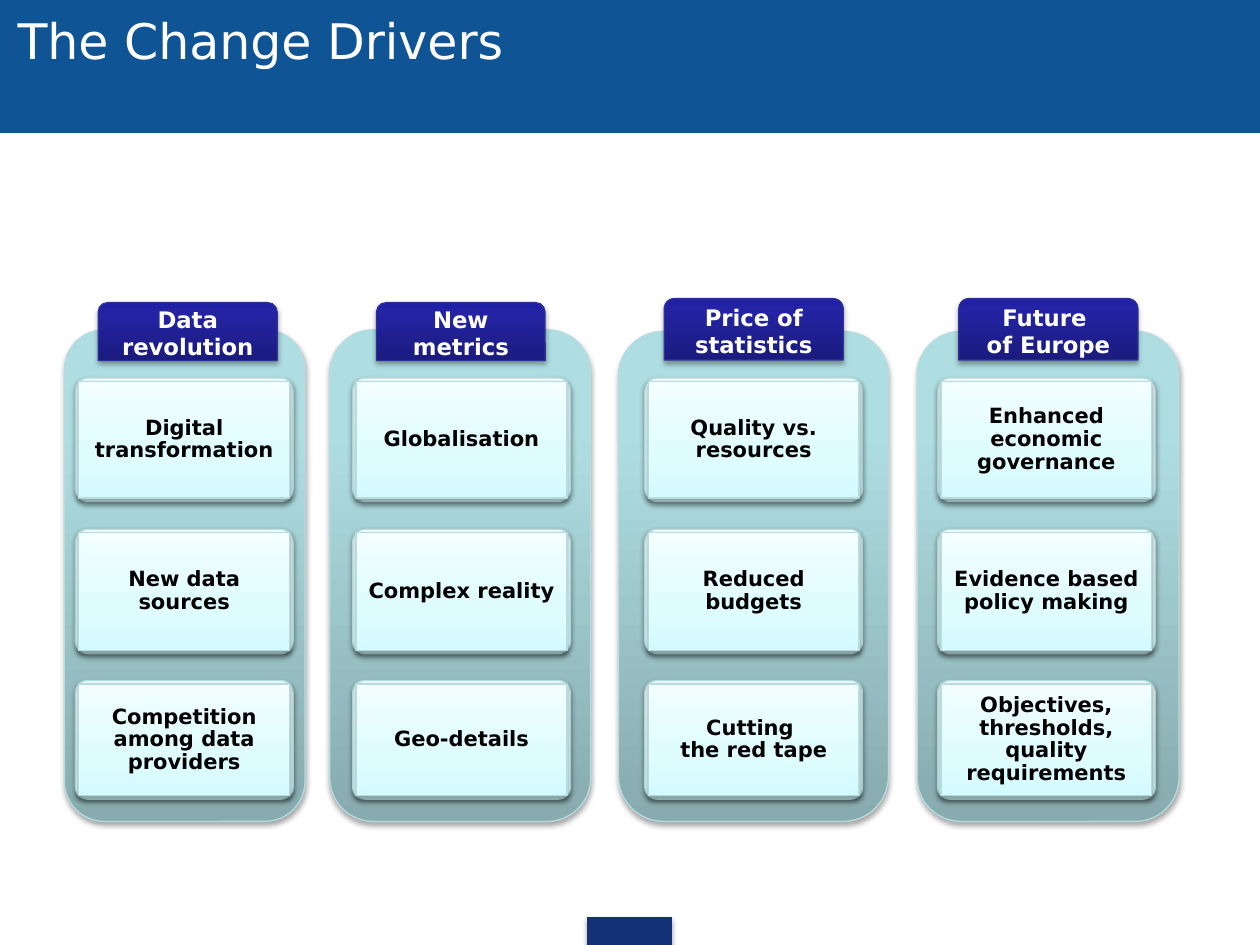
from lxml.etree import SubElement
from pptx import Presentation
from pptx.dml.color import RGBColor
from pptx.enum.shapes import MSO_SHAPE as Preset
from pptx.enum.text import MSO_ANCHOR as Anchor, MSO_AUTO_SIZE as AutoSize, PP_ALIGN as Align
from pptx.oxml.ns import qn
from pptx.util import Cm, Pt

TITLE = "The Change Drivers"
COLUMNS = [
    {"heading": "Data revolution", "panel": (1.3, 6.65, 4.85, 9.91), "tab": (1.98, 6.1, 3.61, 1.17), "cards_left": 1.52,
     "cards": ["Digital transformation", "New data sources", "Competition among data providers"]},
    {"heading": "New metrics", "panel": (6.65, 6.65, 5.26, 9.91), "tab": (7.59, 6.1, 3.4, 1.17), "cards_left": 7.11,
     "cards": ["Globalisation", "Complex reality", "Geo-details"]},
    {"heading": "Price of statistics", "panel": (12.47, 6.68, 5.44, 9.88), "tab": (13.39, 6.02, 3.61, 1.24), "cards_left": 13,
     "cards": ["Quality vs. resources", "Reduced budgets", "Cutting \nthe red tape"]},
    {"heading": "Future \vof Europe", "panel": (18.49, 6.68, 5.28, 9.88), "tab": (19.33, 6.02, 3.61, 1.24), "cards_left": 18.9,
     "cards": ["Enhanced economic governance", "Evidence based policy making",
               "Objectives, thresholds, quality requirements"]},
]
COLORS = {
    "header": "0F5494", "footer": "133176", "panel_line": "B6DCDF", "tab_line": "2F2F98",
    "white": "FFFFFF", "black": "000000",
}
GRADIENTS = {
    "panel": [(0, "87ABAE"), (80, "AFDEE2"), (100, "AFE0E4")],
    "tab": [(0, "1B1B7E"), (80, "2323A3"), (100, "2020A6")],
    "card": [(0, "D3FBFF"), (35, "DFFCFF"), (100, "F2FEFF")],
}
SOFT_SHADOW = {"alpha": 35, "distance": 1.8}
CARD_SHADOW = {"alpha": 38, "distance": 1.6}
CARD_TOP, CARD_PITCH, CARD_WIDTH, CARD_HEIGHTS = 7.62, 3.05, 4.39, (2.49, 2.51, 2.39)
FACE_INSET = 0.07
FONT = "DejaVu Sans"


def set_attributes(target, values):
    for name, value in values.items():
        setattr(target, name, value)


def rgb(name):
    return RGBColor.from_string(COLORS[name])


def fill_gradient(shape, stops):
    shape.fill.gradient()
    shape.fill.gradient_angle = 90
    stop_list = next(shape.element.spPr.iter(qn("a:gsLst")))
    for stop in list(stop_list):
        stop_list.remove(stop)
    for position, color in stops:
        stop = SubElement(stop_list, qn("a:gs"), pos=str(position * 1000))
        SubElement(stop, qn("a:srgbClr"), val=color)


def add_shadow(shape, alpha, distance):
    effects = shape.element.spPr.find(qn("a:effectLst"))
    shadow = SubElement(effects, qn("a:outerShdw"), blurRad=str(Pt(3.1)), dist=str(Pt(distance)),
                        dir="5400000", rotWithShape="0")
    color = SubElement(shadow, qn("a:srgbClr"), val=COLORS["black"])
    SubElement(color, qn("a:alpha"), val=str(alpha * 1000))


def add_box(shapes, preset, box, line, gradient=None, shadow=None):
    shape = shapes.add_shape(preset, *map(Cm, box))
    if gradient:
        fill_gradient(shape, GRADIENTS[gradient])
    else:
        shape.fill.solid()
        shape.fill.fore_color.rgb = rgb(line)
    shape.line.color.rgb = rgb(line)
    shape.line.width = Pt(0.75)
    shape.shadow.inherit = False
    if shadow:
        add_shadow(shape, **shadow)
    return shape


def write_text(shape, text, size, color, frame_format, paragraph_format, bold=True):
    frame = shape.text_frame
    frame.text = text
    set_attributes(frame, frame_format)
    for paragraph in frame.paragraphs:
        set_attributes(paragraph, paragraph_format)
        set_attributes(paragraph.font, {"name": FONT, "size": Pt(size), "bold": bold})
        paragraph.font.color.rgb = rgb(color)


def add_card(slide, text, left, top, height):
    group = slide.shapes.add_group_shape()
    frame = add_box(group.shapes, Preset.ROUNDED_RECTANGLE, (left, top, CARD_WIDTH, height),
                    "panel_line", "card", CARD_SHADOW)
    frame.adjustments[0] = 0.1
    face_box = (left + FACE_INSET, top + FACE_INSET, CARD_WIDTH - 2 * FACE_INSET, height - 2 * FACE_INSET)
    face = add_box(group.shapes, Preset.RECTANGLE, face_box, "panel_line", "card", CARD_SHADOW)
    margins = {"margin_left": Cm(0.1), "margin_right": Cm(0.1), "margin_top": Cm(0.08), "margin_bottom": Cm(0.08)}
    write_text(face, text, 12, "black", {"word_wrap": True, "vertical_anchor": Anchor.MIDDLE, **margins},
               {"alignment": Align.CENTER, "line_spacing": 0.9})


def add_column_head(slide, column):
    add_box(slide.shapes, Preset.ROUNDED_RECTANGLE, column["panel"], "panel_line", "panel", SOFT_SHADOW)
    tab = add_box(slide.shapes, Preset.ROUND_2_SAME_RECTANGLE, column["tab"], "tab_line", "tab", SOFT_SHADOW)
    write_text(tab, column["heading"], 13, "white", {"word_wrap": True, "vertical_anchor": Anchor.MIDDLE},
               {"alignment": Align.CENTER})


def add_title(slide):
    title = slide.shapes.title
    set_attributes(title, {"left": Cm(0.1), "top": Cm(0.08), "width": Cm(10.62), "height": Cm(1.45)})
    write_text(title, TITLE, 28, "white",
               {"word_wrap": True, "vertical_anchor": Anchor.TOP, "auto_size": AutoSize.SHAPE_TO_FIT_TEXT},
               {"alignment": Align.LEFT}, bold=False)
    title.element.getparent().append(title.element)


def main():
    presentation = Presentation()
    set_attributes(presentation, {"slide_width": Cm(25.4), "slide_height": Cm(19.05)})
    slide = presentation.slides.add_slide(presentation.slide_layouts[5])
    add_box(slide.shapes, Preset.RECTANGLE, (0, 0, 25.4, 2.67), "header")
    add_box(slide.shapes, Preset.RECTANGLE, (11.84, 18.49, 1.7, 0.56), "footer", shadow=SOFT_SHADOW)
    for column in COLUMNS:
        add_column_head(slide, column)
    for column in COLUMNS:
        for row, (text, height) in enumerate(zip(column["cards"], CARD_HEIGHTS)):
            add_card(slide, text, column["cards_left"], CARD_TOP + row * CARD_PITCH, height)
    add_title(slide)
    presentation.save("out.pptx")


if __name__ == "__main__":
    main()
